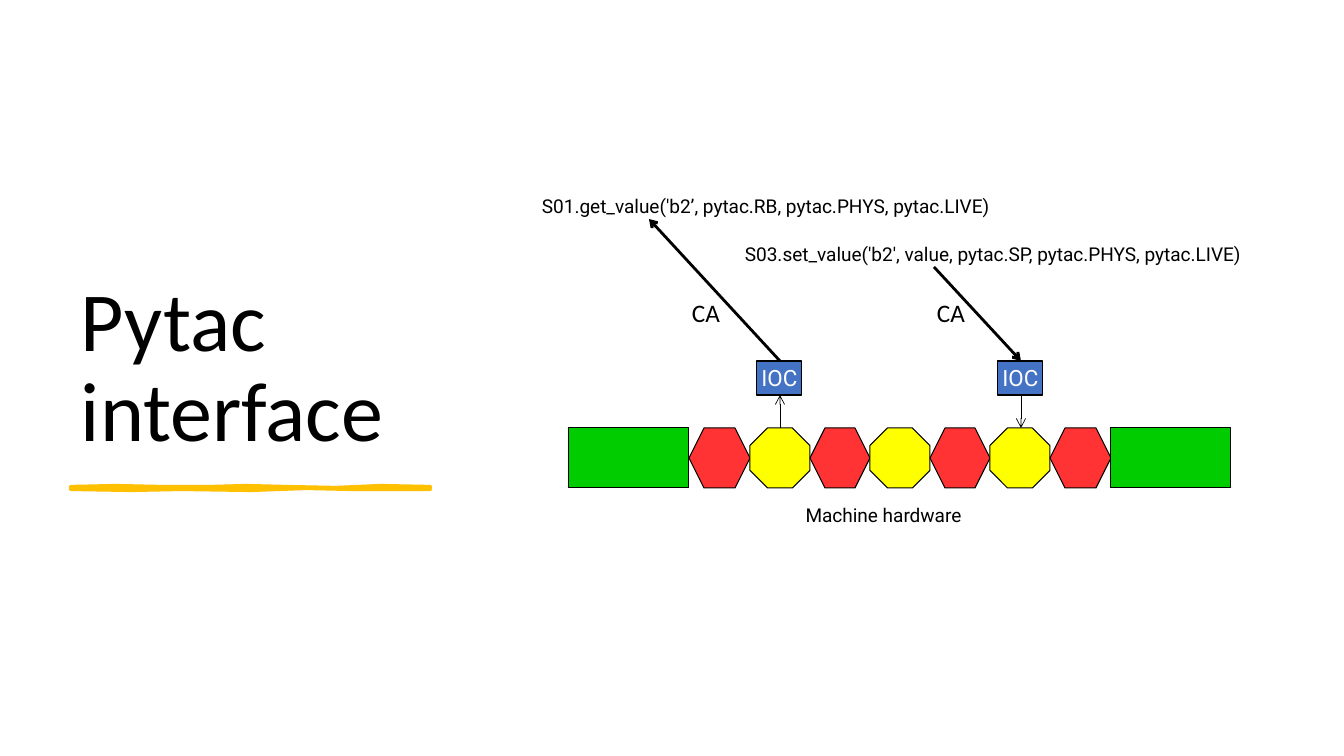
from lxml import etree
from pptx import Presentation
from pptx.dml.color import RGBColor
from pptx.enum.shapes import MSO_CONNECTOR, MSO_SHAPE
from pptx.enum.text import MSO_ANCHOR, PP_ALIGN
from pptx.oxml.ns import qn
from pptx.util import Pt

PX = 914400 / 100.8
RECT, HEXAGON, OCTAGON = MSO_SHAPE.RECTANGLE, MSO_SHAPE.HEXAGON, MSO_SHAPE.OCTAGON
STRAIGHT = MSO_CONNECTOR.STRAIGHT
LEFT, CENTER = PP_ALIGN.LEFT, PP_ALIGN.CENTER
TOP, MIDDLE, BOTTOM = MSO_ANCHOR.TOP, MSO_ANCHOR.MIDDLE, MSO_ANCHOR.BOTTOM
BLACK, WHITE, GOLD, BLUE = "000000", "FFFFFF", "FFC000", "4472C4"
# Machine elements: preset shape, fill, width in cells
DRIFT = (RECT, "00CC00", 2)
RED = (HEXAGON, "FF3333", 1)
YELLOW = (OCTAGON, "FFFF00", 1)
LATTICE = [DRIFT, RED, YELLOW, RED, YELLOW, RED, YELLOW, RED, DRIFT]
CELLS = sum(cells for _, _, cells in LATTICE)


def px(*lengths):
    return [round(n * PX) for n in lengths]


def color(hex_string):
    return RGBColor.from_string(hex_string)


def write(sp, text, size, font="Roboto", fill=BLACK, align=LEFT, anchor=TOP, wrap=True):
    tf = sp.text_frame
    tf.text = text
    tf.word_wrap = wrap
    tf.vertical_anchor = anchor
    p = tf.paragraphs[0]
    p.alignment = align
    f = p.runs[0].font
    f.size, f.name = Pt(size), font
    f.color.rgb = color(fill)
    return p


def add_text(s, box, text, size, **style):
    return write(s.shapes.add_textbox(*px(*box)), text, size, **style)


def paint(sp, fill, line, width):
    sp.shadow.inherit = False
    sp.fill.solid()
    sp.fill.fore_color.rgb = color(fill)
    sp.line.color.rgb = color(line)
    sp.line.width = Pt(width)


def add_block(s, box, kind, fill):
    sp = s.shapes.add_shape(kind, *px(*box))
    paint(sp, fill, BLACK, 0)
    return sp


def add_arrow(s, start, end, width):
    c = s.shapes.add_connector(STRAIGHT, *px(*start, *end))
    c.line.color.rgb = color(BLACK)
    c.line.width = Pt(width)
    etree.SubElement(c.line._get_or_add_ln(), qn("a:tailEnd"), type="arrow")
    etree.SubElement(c._element.spPr, qn("a:effectLst"))


def add_title(s, box):
    x, y, w, h = box
    p = add_text(s, box, "Pytac interface", 60, font="Calibri", anchor=BOTTOM)
    p.line_spacing = 0.9
    # Hand-drawn underline, just below the title
    top = [(0, 1), (45, 0), (90, 1), (140, 1), (175, 0), (215, 1), (265, 2), (310, 0), (359, 1)]
    bottom = [(359, 3), (280, 3), (235, 2), (180, 4), (110, 3), (60, 4), (0, 3)]
    points = [(x + dx, y + h + 21 + dy) for dx, dy in top + bottom]
    builder = s.shapes.build_freeform(*points[0], scale=PX)
    builder.add_line_segments(points[1:], close=True)
    paint(builder.convert_to_shape(), GOLD, GOLD, 3)


def add_machine(s, box):
    x, y, w, h = box
    cell = 0
    for kind, fill, cells in LATTICE:
        left, right = (round(x + w * n / CELLS) for n in (cell, cell + cells))
        add_block(s, (left, y, right - left, h), kind, fill)
        cell += cells
    add_text(s, (x + 170, y + h + 11, 289, 32), "Machine hardware", 13.6, align=CENTER)


def add_controller(s, center, bottom, call_at, reading):
    """One IOC above the machine, linked to it and to a Pytac call."""
    top = bottom - 67
    ioc = add_block(s, (center - 23, top, 45, 34), RECT, BLUE)
    write(ioc, "IOC", 16, fill=WHITE, align=CENTER, anchor=MIDDLE, wrap=False)
    path_down = [(call_at, (center, top)), ((center, top + 34), (center, bottom))]
    for (start, end), width in zip(path_down, (0, 0.5)):
        if reading:
            start, end = end, start
        add_arrow(s, start, end, width)


def add_calls(s, box):
    x, y, w, h = box
    add_text(s, (x, y, 491, 32),
             "S01.get_value('b2’, pytac.RB, pytac.PHYS, pytac.LIVE)", 13.6)
    add_text(s, (x + w - 542, y + 48, 542, 32),
             "S03.set_value('b2', value, pytac.SP, pytac.PHYS, pytac.LIVE)", 13.6)
    for left in (x + 150, x + 395):
        add_text(s, (left, y + h - 40, 48, 40), "CA", 18, font="Calibri", wrap=False)


def main():
    prs = Presentation()
    prs.slide_width, prs.slide_height = px(1344, 756)
    s = prs.slides.add_slide(prs.slide_layouts[6])
    add_title(s, (71, 71, 394, 394))
    add_machine(s, (569, 428, 662, 60))
    add_controller(s, 780, 428, (649, 219), reading=True)
    add_controller(s, 1021, 428, (934, 267), reading=False)
    add_calls(s, (532, 190, 745, 142))
    prs.save("out.pptx")


if __name__ == "__main__":
    main()
